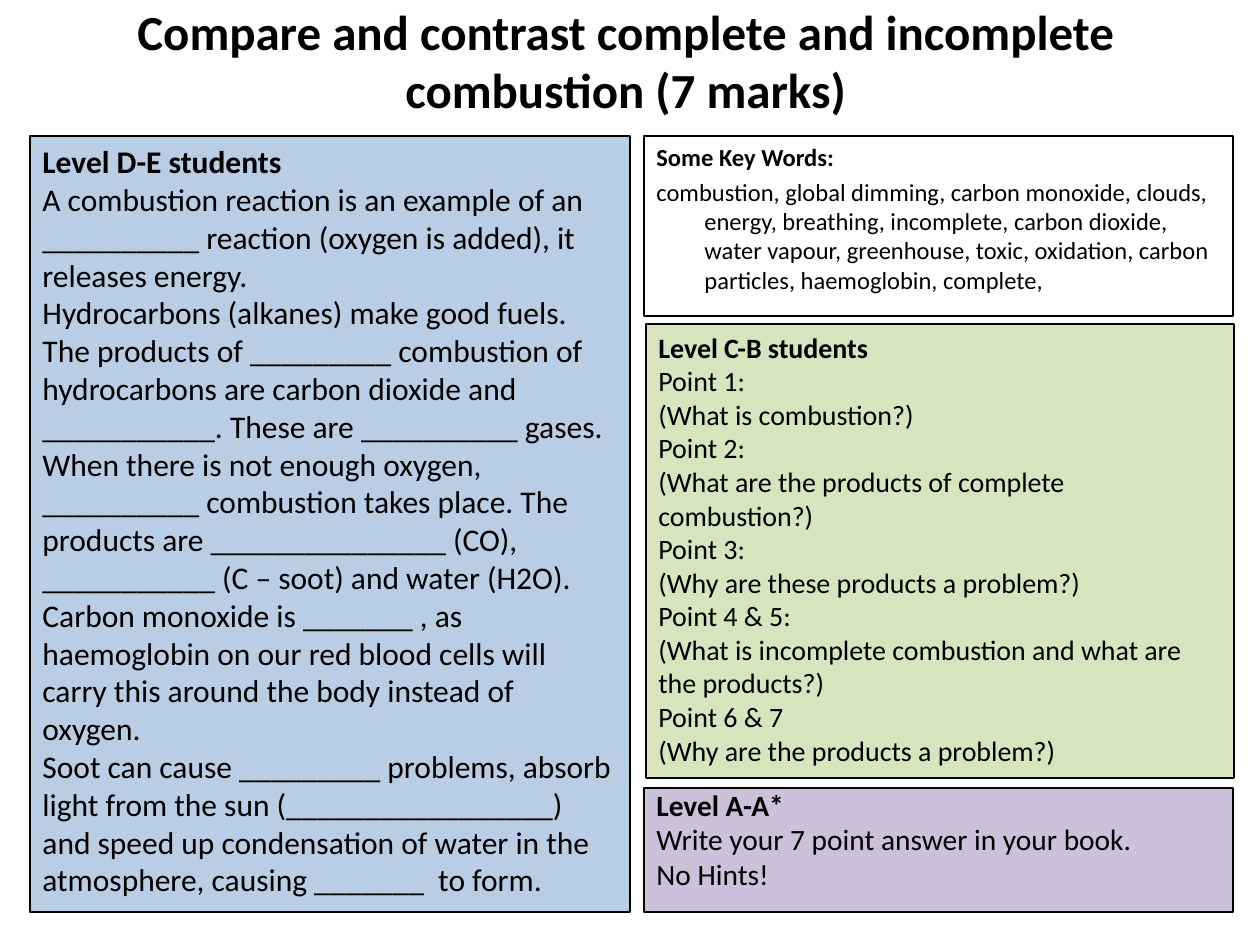
from pptx import Presentation
from pptx.dml.color import RGBColor
from pptx.enum.text import MSO_ANCHOR as Anchor, PP_ALIGN as Align
from pptx.util import Emu, Pt

EMU_PER_PX = 914400 / 126
BLACK = RGBColor(0x00, 0x00, 0x00)
WHITE = RGBColor(0xFF, 0xFF, 0xFF)
BLUE = RGBColor(0xB9, 0xCD, 0xE5)
GREEN = RGBColor(0xD7, 0xE4, 0xBD)
PURPLE = RGBColor(0xCC, 0xC1, 0xDA)
HANGING_INDENT = 48

TITLE = "Compare and contrast complete and incomplete combustion (7 marks)"
KEY_WORDS = [
    "Some Key Words:",
    "combustion, global dimming, carbon monoxide, clouds, energy, breathing, "
    "incomplete, carbon dioxide, water vapour, greenhouse, toxic, oxidation, "
    "carbon particles, haemoglobin, complete,",
]
LEVEL_D_E = [
    "Level D-E students",
    "A combustion reaction is an example of an __________ reaction "
    "(oxygen is added), it releases energy.",
    "Hydrocarbons (alkanes) make good fuels. The products of _________ "
    "combustion of hydrocarbons are carbon dioxide and ___________. "
    "These are __________ gases.",
    "When there is not enough oxygen, __________ combustion takes place. "
    "The products are _______________ (CO), ___________ (C – soot) and water (H2O).",
    "Carbon monoxide is _______ , as haemoglobin on our red blood cells will "
    "carry this around the body instead of oxygen.",
    "Soot can cause _________ problems, absorb light from the sun "
    "(_________________) and speed up condensation of water in the atmosphere, "
    "causing _______  to form.",
]
LEVEL_C_B = [
    "Level C-B students",
    "Point 1:",
    "(What is combustion?)",
    "Point 2:",
    "(What are the products of complete combustion?)",
    "Point 3:",
    "(Why are these products a problem?)",
    "Point 4 & 5:",
    "(What is incomplete combustion and what are the products?)",
    "Point 6 & 7",
    "(Why are the products a problem?)",
]
LEVEL_A = [
    "Level A-A*",
    "Write your 7 point answer in your book.",
    "No Hints!",
]


def px(length):
    return Emu(round(length * EMU_PER_PX))


def apply(target, values):
    for name, value in values.items():
        setattr(target, name, value)


def add_text(page, area, lines, size, paragraph_format, anchor=Anchor.TOP, hanging=False):
    box = page.shapes.add_textbox(*map(px, area))
    frame = box.text_frame
    apply(frame, {"word_wrap": True, "vertical_anchor": anchor})
    for index, line in enumerate(lines):
        para = frame.add_paragraph() if index else frame.paragraphs[0]
        apply(para, paragraph_format)
        if hanging:
            properties = para._p.get_or_add_pPr()
            properties.set("marL", str(px(HANGING_INDENT)))
            properties.set("indent", str(px(-HANGING_INDENT)))
        span = para.add_run()
        span.text = line
        apply(span.font, {"name": "Calibri", "size": Pt(size), "bold": index == 0})
        span.font.color.rgb = BLACK
    return box


def add_panel(page, area, lines, size, fill, paragraph_format, hanging=False):
    box = add_text(page, area, lines, size, paragraph_format, hanging=hanging)
    box.fill.solid()
    box.fill.fore_color.rgb = fill
    box.line.color.rgb = BLACK
    box.line.width = Pt(0.75)


def main():
    deck = Presentation()
    apply(deck, {"slide_width": px(1260), "slide_height": px(945)})
    page = deck.slides.add_slide(deck.slide_layouts[6])

    plain = {"alignment": Align.LEFT}
    spaced = {**plain, "space_before": Pt(2.8)}
    tight = {**plain, "space_before": Pt(3.4), "line_spacing": 0.8}

    add_text(page, (10, 21, 1231, 78), [TITLE], 28,
             {"alignment": Align.CENTER}, Anchor.MIDDLE)
    add_panel(page, (644, 136, 589, 180), KEY_WORDS, 14, WHITE, spaced, hanging=True)
    add_panel(page, (30, 136, 600, 776), LEVEL_D_E, 18, BLUE, plain)
    add_panel(page, (646, 324, 588, 454), LEVEL_C_B, 16, GREEN, plain)
    add_panel(page, (644, 788, 589, 124), LEVEL_A, 16.8, PURPLE, tight, hanging=True)
    deck.save("out.pptx")


if __name__ == "__main__":
    main()
